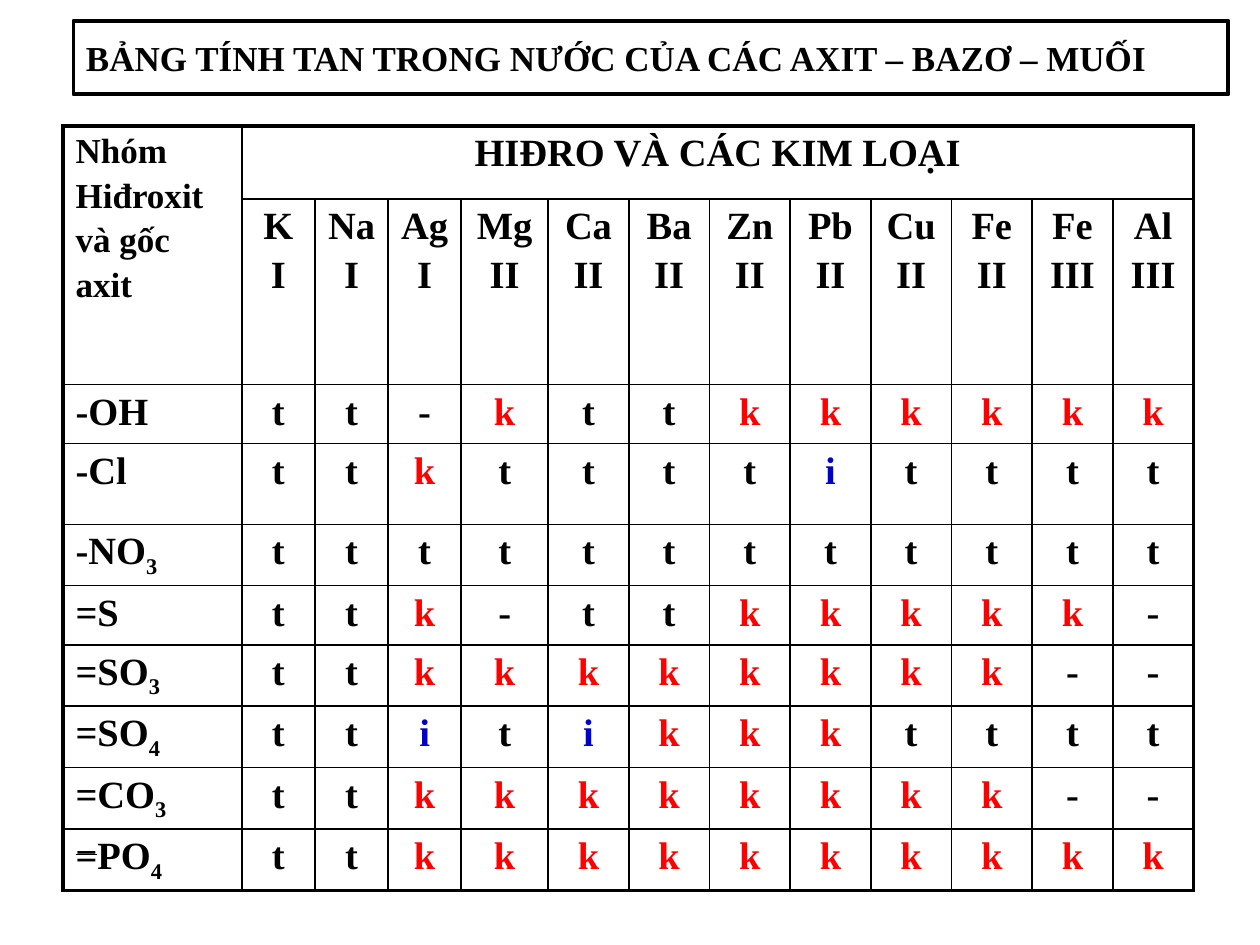
from lxml import etree
from pptx import Presentation
from pptx import util as u
from pptx.dml.color import RGBColor
from pptx.enum import shapes, text
from pptx.oxml.ns import qn

# Content
TITLE = "BẢNG TÍNH TAN TRONG NƯỚC CỦA CÁC AXIT – BAZƠ – MUỐI"
CORNER = ["Nhóm", "Hiđroxit", "và gốc", "axit"]
HEAD = "HIĐRO VÀ CÁC KIM LOẠI"
METALS = [("K", "I"), ("Na", "I"), ("Ag", "I"), ("Mg", "II"), ("Ca", "II"), ("Ba", "II"),
          ("Zn", "II"), ("Pb", "II"), ("Cu", "II"), ("Fe", "II"), ("Fe", "III"), ("Al", "III")]
# Group, subscript, one mark per metal
GROUPS = [
    ("-OH", "", "tt-kttkkkkkk"),
    ("-Cl", "", "ttkttttitttt"),
    ("-NO", "3", "tttttttttttt"),
    ("=S", "", "ttk-ttkkkkk-"),
    ("=SO", "3", "ttkkkkkkkk--"),
    ("=SO", "4", "ttitikkktttt"),
    ("=CO", "3", "ttkkkkkkkk--"),
    ("=PO", "4", "ttkkkkkkkkkk"),
]

# Format values
INK = "000000"
TINTS = {"k": "FF0000", "i": "0000CC"}
FONT = {"name": "Times New Roman", "bold": True}
THIN, THICK = 1, 2.25
COLS = [102.2] + [41.8] * 3 + [49.7] + [46.1] * 8
ROWS = [41.8, 75.6, 33.8, 46.1] + [33.8] * 6
LEFT, MID = text.PP_ALIGN.LEFT, text.PP_ALIGN.CENTER


def tint(code):
    return RGBColor.from_string(code)


def add_run(para, words, size, color=INK, sub=False):
    run = para.add_run()
    run.text = words
    for key, val in {**FONT, "size": u.Pt(size)}.items():
        setattr(run.font, key, val)
    run.font.color.rgb = tint(color)
    if sub:
        run._r.get_or_add_rPr().set("baseline", "-25000")


def write(frame, lines, size=22, align=MID, color=INK, sub=""):
    for n, line in enumerate(lines):
        para = frame.add_paragraph() if n else frame.paragraphs[0]
        para.alignment = align
        if n:
            para.space_before = u.Pt(size / 6)
        add_run(para, line, size, color)
    if sub:
        add_run(para, sub, size, color, sub=True)


def edge(cell, sides):
    props = cell._tc.get_or_add_tcPr()
    for n, (side, width) in enumerate(sides.items()):
        line = etree.Element(qn("a:ln" + side), w=str(u.Pt(width)))
        fill = etree.SubElement(line, qn("a:solidFill"))
        etree.SubElement(fill, qn("a:srgbClr"), val=INK)
        props.insert(n, line)


deck = Presentation()
deck.slide_width, deck.slide_height = u.Pt(720), u.Pt(540)
slide = deck.slides.add_slide(deck.slide_layouts[6])

# Solubility table
grid = slide.shapes.add_table(len(ROWS), len(COLS), u.Pt(36), u.Pt(72),
                              u.Pt(sum(COLS)), u.Pt(sum(ROWS))).table
grid.first_row = grid.horz_banding = False
for col, width in zip(grid.columns, COLS):
    col.width = u.Pt(width)
for row, height in zip(grid.rows, ROWS):
    row.height = u.Pt(height)

# Header cells
grid.cell(0, 0).merge(grid.cell(1, 0))
grid.cell(0, 1).merge(grid.cell(0, len(METALS)))
write(grid.cell(0, 0).text_frame, CORNER, size=20, align=LEFT)
write(grid.cell(0, 1).text_frame, [HEAD])
for c, metal in enumerate(METALS, 1):
    write(grid.cell(1, c).text_frame, metal)

# Body cells
for r, (group, sub, marks) in enumerate(GROUPS, 2):
    write(grid.cell(r, 0).text_frame, [group], align=LEFT, sub=sub)
    for c, mark in enumerate(marks, 1):
        write(grid.cell(r, c).text_frame, [mark], color=TINTS.get(mark, INK))

# Borders: thick outside, thin inside
for r in range(len(ROWS)):
    for c in range(len(COLS)):
        cell = grid.cell(r, c)
        if cell.is_spanned:
            continue
        wide, high = (cell.span_width, cell.span_height) if cell.is_merge_origin else (1, 1)
        outer = {"L": c == 0, "R": c + wide == len(COLS),
                 "T": r == 0, "B": r + high == len(ROWS)}
        cell.fill.background()
        edge(cell, {side: THICK if out else THIN for side, out in outer.items()})

# Title box
box = slide.shapes.add_shape(shapes.MSO_SHAPE.RECTANGLE,
                             u.Pt(42), u.Pt(12), u.Pt(660), u.Pt(42))
box.shadow.inherit = False
box.fill.background()
box.line.color.rgb = tint(INK)
box.line.width = u.Pt(THICK)
box.text_frame.word_wrap = True
box.text_frame.vertical_anchor = text.MSO_ANCHOR.MIDDLE
write(box.text_frame, [TITLE], size=20, align=LEFT)

# Short stroke by the last group
dash = slide.shapes.add_connector(shapes.MSO_CONNECTOR.STRAIGHT,
                                  u.Pt(43.2), u.Pt(488.2), u.Pt(55.4), u.Pt(488.2))
dash.line.color.rgb = tint(INK)
dash.line.width = u.Pt(0.75)
etree.SubElement(dash._element.spPr, qn("a:effectLst"))

deck.save("out.pptx")
